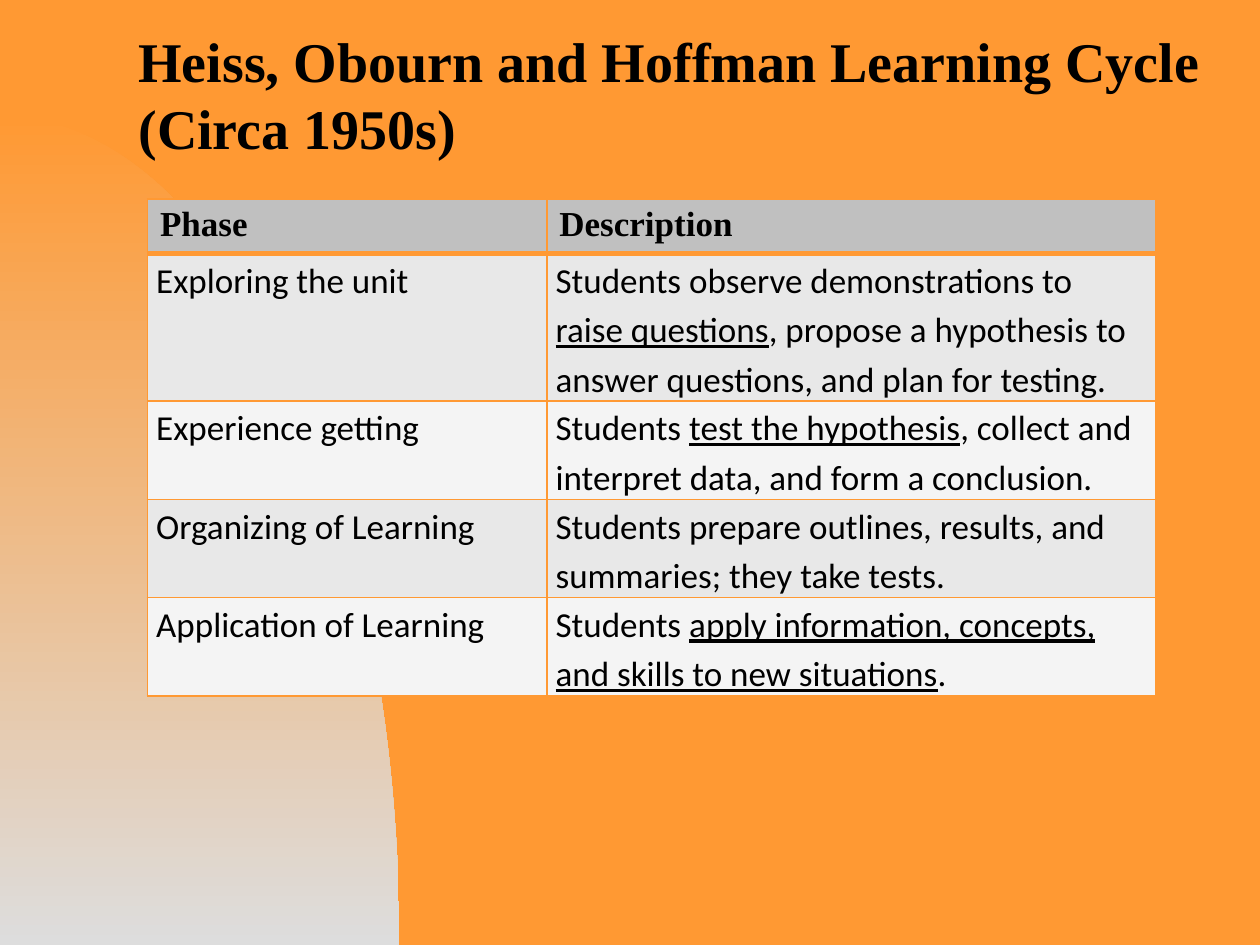
from dataclasses import dataclass

from lxml.etree import SubElement
from pptx import Presentation
from pptx.dml.color import RGBColor
from pptx.enum.text import MSO_ANCHOR
from pptx.oxml.ns import qn
from pptx.util import Inches, Pt


@dataclass(frozen=True)
class Theme:
    orange: str = "FF9933"
    fade: str = "DDDDDD"
    ink: str = "000000"
    header: str = "C0C0C0"
    bands: tuple = ("E8E8E8", "F4F4F4")
    heading_font: str = "Times New Roman"
    body_font: str = "Calibri"
    title_size: int = 32
    table_size: int = 20


THEME = Theme()
PHASES = [
    # Each description is a list of (text, underlined) pieces.
    ("Exploring the unit", 1.17, [
        ("Students observe demonstrations to ", False),
        ("raise questions", True),
        (", propose a hypothesis to answer questions, and plan for testing.", False)]),
    ("Experience getting", 0.78, [
        ("Students ", False),
        ("test the hypothesis", True),
        (", collect and interpret data, and form a conclusion.", False)]),
    ("Organizing of Learning", 0.78, [
        ("Students prepare outlines, results, and summaries; they take tests.", False)]),
    ("Application of Learning", 0.78, [
        ("Students ", False),
        ("apply information, concepts, and skills to new situations", True),
        (".", False)]),
]


def style_font(font, name, size, bold):
    font.name = name
    font.size = Pt(size)
    font.bold = bold
    font.color.rgb = RGBColor.from_string(THEME.ink)


def fill_cell(cell, color, bottom_width):
    """Give a cell its fill and orange borders."""
    properties = cell._tc.get_or_add_tcPr()
    for side in ("lnL", "lnR", "lnT", "lnB"):
        width = bottom_width if side == "lnB" else 1
        border = SubElement(properties, qn(f"a:{side}"), w=str(Pt(width)))
        solid = SubElement(border, qn("a:solidFill"))
        SubElement(solid, qn("a:srgbClr"), val=THEME.orange)
    cell.fill.solid()
    cell.fill.fore_color.rgb = RGBColor.from_string(color)


prs = Presentation()
prs.slide_width = Inches(10)
prs.slide_height = Inches(7.5)
slide = prs.slides.add_slide(prs.slide_layouts[6])
slide.background.fill.solid()
slide.background.fill.fore_color.rgb = RGBColor.from_string(THEME.orange)

# Quarter-oval in the lower left, traced along a cubic curve
curve = [(0, 0.92), (1.75, 0.92), (3.17, 3.87), (3.17, 7.5)]
steps = 48
outline = []
for step in range(steps + 1):
    t = step / steps
    weights = ((1 - t) ** 3, 3 * t * (1 - t) ** 2, 3 * t ** 2 * (1 - t), t ** 3)
    outline.append(tuple(
        Inches(sum(w * point[axis] for w, point in zip(weights, curve)))
        for axis in (0, 1)))
outline.append((0, Inches(7.5)))
builder = slide.shapes.build_freeform(*outline[0])
builder.add_line_segments(outline[1:], close=True)
oval = builder.convert_to_shape()
oval.shadow.inherit = False
oval.line.fill.background()
oval.fill.gradient()
oval.fill.gradient_angle = 270
for stop, color in zip(oval.fill.gradient_stops, (THEME.orange, THEME.fade)):
    stop.color.rgb = RGBColor.from_string(color)

title = slide.shapes.add_textbox(Inches(1), Inches(0.18), Inches(8.67), Inches(1.13))
title.text_frame.word_wrap = True
title.text_frame.vertical_anchor = MSO_ANCHOR.MIDDLE
heading = title.text_frame.paragraphs[0]
heading.text = "Heiss, Obourn and Hoffman Learning Cycle (Circa 1950s)"
style_font(heading.font, THEME.heading_font, THEME.title_size, True)

cycle = slide.shapes.add_table(
    len(PHASES) + 1, 2, Inches(1.17), Inches(1.58), Inches(8), Inches(3.92)).table
cycle.columns[0].width = Inches(3.17)
cycle.columns[1].width = Inches(4.83)
cycle.rows[0].height = Inches(0.41)

for cell, label in zip(cycle.rows[0].cells, ("Phase", "Description")):
    fill_cell(cell, THEME.header, 3)
    paragraph = cell.text_frame.paragraphs[0]
    paragraph.text = label
    style_font(paragraph.font, THEME.heading_font, THEME.table_size, True)

for index, (phase, height, description) in enumerate(PHASES):
    row = cycle.rows[index + 1]
    row.height = Inches(height)
    for cell, pieces in zip(row.cells, ([(phase, False)], description)):
        fill_cell(cell, THEME.bands[index % 2], 1)
        cell.margin_left = cell.margin_right = Inches(0.07)
        cell.margin_top = cell.margin_bottom = 0
        paragraph = cell.text_frame.paragraphs[0]
        paragraph.line_spacing = 1.15
        style_font(paragraph.font, THEME.body_font, THEME.table_size, False)
        for text, underlined in pieces:
            run = paragraph.add_run()
            run.text = text
            if underlined:
                run.font.underline = True

prs.save("out.pptx")
